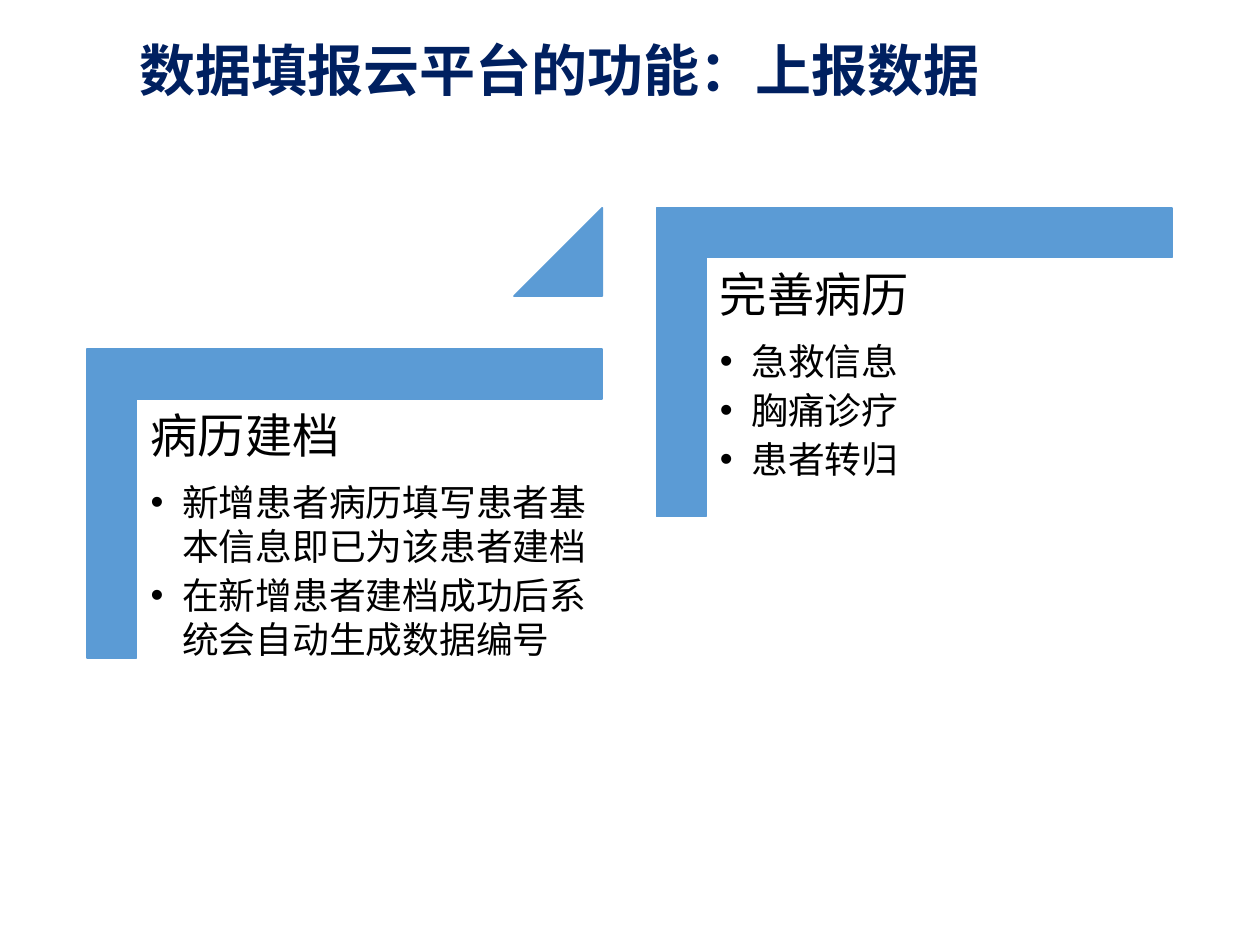
from collections import namedtuple

from lxml import etree
from pptx import Presentation
from pptx.dml.color import RGBColor
from pptx.enum.shapes import MSO_SHAPE
from pptx.enum.text import MSO_ANCHOR
from pptx.oxml.ns import qn
from pptx.util import Inches, Pt

CORNER = MSO_SHAPE.CORNER
TRIANGLE = MSO_SHAPE.ISOSCELES_TRIANGLE
MIDDLE = MSO_ANCHOR.MIDDLE

NAVY = RGBColor(0x00, 0x20, 0x60)
BLUE = RGBColor(0x5B, 0x9B, 0xD5)
BLACK = RGBColor(0x00, 0x00, 0x00)
FONT = "Noto Sans CJK SC"

WIDTH, HEIGHT = Inches(10), Inches(7.5)
COLUMN, ROW = WIDTH / 100, HEIGHT / 75
ARM = 0.161

Area = namedtuple("Area", "left top width height")

TITLE = "数据填报云平台的功能：上报数据"
STEPS = [
    ("病历建档", ["新增患者病历填写患者基本信息即已为该患者建档",
              "在新增患者建档成功后系统会自动生成数据编号"]),
    ("完善病历", ["急救信息", "胸痛诊疗", "患者转归"]),
]
FIRST_STEP = Area(6.9, 27.7, 40.9, 24.5)
STRIDE, RISE = 45.2, 11.2


def place(area):
    """Turn an area in columns and rows into slide lengths."""
    return (round(area.left * COLUMN), round(area.top * ROW),
            round(area.width * COLUMN), round(area.height * ROW))


def add_span(para, text, size, color, bold=False):
    """Add one styled run to a paragraph."""
    span = para.add_run()
    span.text = text
    span.font.size = Pt(size)
    span.font.name = FONT
    span.font.bold = bold
    span.font.color.rgb = color
    latin = span.font._element.find(qn("a:latin"))
    east_asian = etree.Element(qn("a:ea"), typeface=FONT)
    latin.addnext(east_asian)


def add_bullet(para):
    """Give a paragraph a hanging round bullet."""
    properties = para._p.get_or_add_pPr()
    properties.set("marL", str(Inches(0.25)))
    properties.set("indent", str(-Inches(0.25)))
    etree.SubElement(properties, qn("a:buFont"), typeface="Arial")
    etree.SubElement(properties, qn("a:buChar"), char="•")


def add_solid(page, kind, area):
    """Add a blue preset shape."""
    shape = page.shapes.add_shape(kind, *place(area))
    shape.shadow.inherit = False
    shape.fill.solid()
    shape.fill.fore_color.rgb = BLUE
    shape.line.color.rgb = BLUE
    shape.line.width = Pt(1)
    return shape


def add_title(page, area):
    """Write the slide title in its area."""
    box = page.shapes.add_textbox(*place(area))
    frame = box.text_frame
    frame.word_wrap = True
    frame.vertical_anchor = MIDDLE
    para = frame.paragraphs[0]
    para.line_spacing = 0.9
    add_span(para, TITLE, 32, NAVY, bold=True)


def add_step_text(page, area, heading, points):
    """Write a step's heading and bullet points."""
    frame = page.shapes.add_textbox(*place(area)).text_frame
    frame.word_wrap = True
    frame.margin_left = frame.margin_right = Inches(0.11)
    frame.margin_top = frame.margin_bottom = Inches(0.11)
    para = frame.paragraphs[0]
    para.line_spacing = 0.9
    para.space_after = Pt(27 * 0.35)
    add_span(para, heading, 27, BLACK)
    for point in points:
        para = frame.add_paragraph()
        para.level = 1
        para.line_spacing = Pt(25)
        para.space_after = Pt(21 * 0.15)
        add_bullet(para)
        add_span(para, point, 21, BLACK)


def add_step(page, area, heading, points):
    """Draw a step: a turned corner with text inside it."""
    turn = (area.width - area.height) / 2
    corner = add_solid(page, CORNER, Area(area.left + turn, area.top - turn,
                                          area.height, area.width))
    corner.rotation = 90
    corner.adjustments[0] = corner.adjustments[1] = ARM
    inset = area.height * ARM
    add_step_text(page, Area(area.left + inset, area.top + inset,
                             area.width - inset, 32.3), heading, points)


def add_staircase(page, area):
    """Draw the rising steps with a triangle between neighbours."""
    for index, (heading, points) in enumerate(STEPS):
        step = area._replace(left=area.left + index * STRIDE,
                             top=area.top - index * RISE)
        add_step(page, step, heading, points)
        if index < len(STEPS) - 1:
            side = 7
            marker = add_solid(page, TRIANGLE, Area(
                step.left + step.width - side, step.top - RISE, side, side))
            marker.adjustments[0] = 1


def main():
    """Build and save the deck."""
    deck = Presentation()
    deck.slide_width, deck.slide_height = WIDTH, HEIGHT
    page = deck.slides.add_slide(deck.slide_layouts[6])
    add_title(page, Area(10.1, 2, 82, 7.6))
    add_staircase(page, FIRST_STEP)
    deck.save("out.pptx")


if __name__ == "__main__":
    main()
